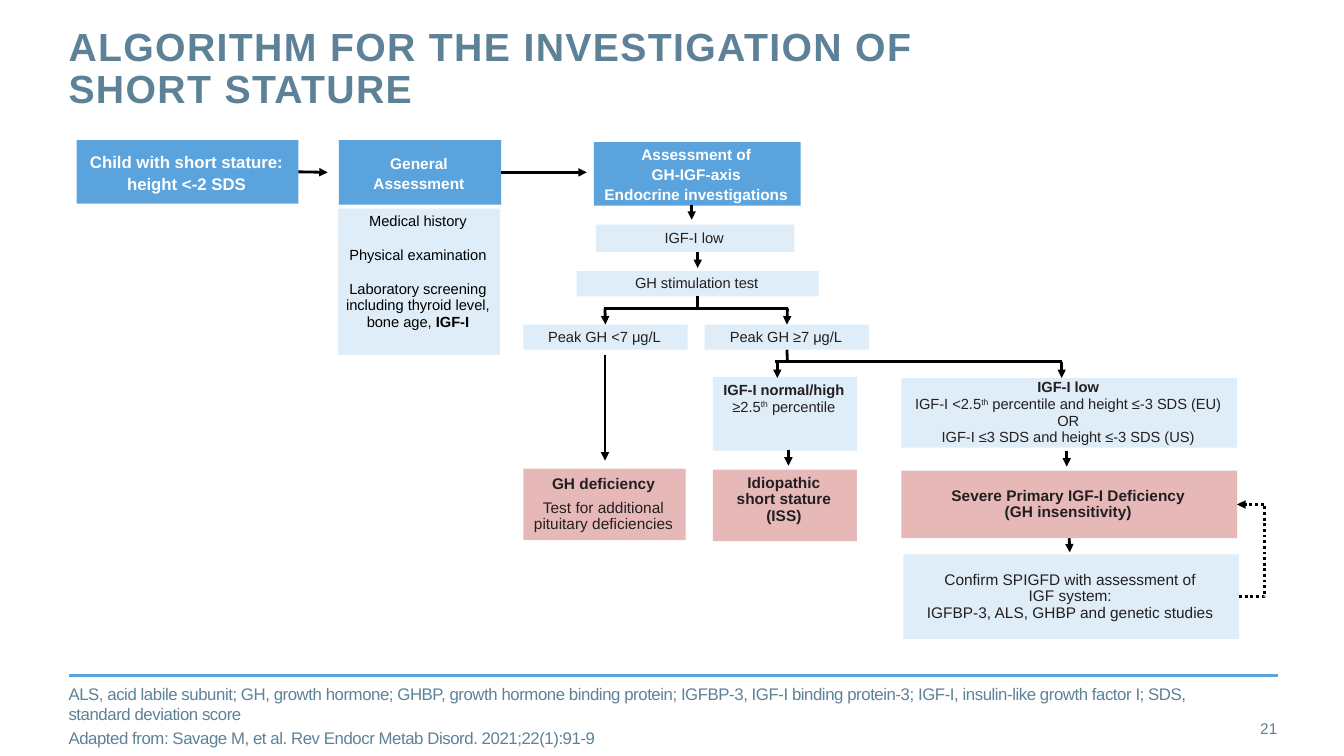
from lxml import etree
from pptx import Presentation
from pptx.dml.color import RGBColor
from pptx.enum.dml import MSO_LINE
from pptx.enum.shapes import MSO_CONNECTOR, MSO_SHAPE
from pptx.enum.text import MSO_ANCHOR, PP_ALIGN
from pptx.oxml.ns import qn
from pptx.util import Inches, Pt

STRAIGHT, ELBOW = MSO_CONNECTOR.STRAIGHT, MSO_CONNECTOR.ELBOW
RECTANGLE = MSO_SHAPE.RECTANGLE
DOTTED = MSO_LINE.ROUND_DOT
TOP, MIDDLE = MSO_ANCHOR.TOP, MSO_ANCHOR.MIDDLE
LEFT, CENTER, RIGHT = PP_ALIGN.LEFT, PP_ALIGN.CENTER, PP_ALIGN.RIGHT
SIDE_TOP, SIDE_BOTTOM, SIDE_RIGHT = 0, 2, 3
FONT = "Arial"
COLOURS = {
    "blue": "5BA3DD", "pale": "DEEDF8", "pink": "E6B9B8", "slate": "5D8298",
    "ink": "231F20", "black": "000000", "white": "FFFFFF",
}

STYLES = {
    "lead": ("blue", "white", 12, 1.07, MIDDLE),
    "stage": ("blue", "white", 11, 1.07, MIDDLE),
    "checks": ("pale", "black", 10.5, 0.95, TOP),
    "finding": ("pale", "ink", 10.5, 0.95, MIDDLE),
    "finding top": ("pale", "ink", 10.5, 0.95, TOP),
    "diagnosis": ("pink", "ink", 11, 0.9, MIDDLE),
    "diagnosis top": ("pink", "ink", 11, 0.9, TOP),
    "follow-up": ("pale", "ink", 11, 0.9, MIDDLE),
}

BOXES = [
    ("child", (0.76, 1.39, 2.2, 0.63), "lead",
     [(0, [("Child with short stature: height <-2 SDS", "bold")])]),
    ("general", (3.36, 1.39, 1.61, 0.64), "stage",
     [(0, [("General Assessment", "bold")])]),
    ("checks", (3.35, 2.07, 1.61, 1.45), "checks",
     [(0, [("Medical history", "")]),
      (12, [("Physical examination", "")]),
      (12, [("Laboratory screening including thyroid level, bone age, ", ""),
            ("IGF-I", "bold")])]),
    ("axis", (5.89, 1.41, 2.05, 0.63), "stage",
     [(0, [("Assessment of", "bold")]),
      (0, [("GH-IGF-axis", "bold")]),
      (0, [("Endocrine investigations", "bold")])]),
    ("low", (5.91, 2.23, 1.97, 0.27), "finding", [(0, [("IGF-I low", "")])]),
    ("stimulation", (5.72, 2.69, 2.4, 0.25), "finding",
     [(0, [("GH stimulation test", "")])]),
    ("peak below", (5.19, 3.22, 1.63, 0.25), "finding",
     [(0, [("Peak GH <7 μg/L", "")])]),
    ("peak above", (6.99, 3.22, 1.63, 0.25), "finding",
     [(0, [("Peak GH ≥7 μg/L", "")])]),
    ("normal", (7.07, 3.74, 1.43, 0.73), "finding top",
     [(0, [("IGF-I normal/high", "bold")]),
      (0, [("≥2.5", ""), ("th", "super"), (" percentile", "")])]),
    ("low percentile", (8.94, 3.75, 3.33, 0.69), "finding",
     [(0, [("IGF-I low", "bold")]),
      (0, [("IGF-I <2.5", ""), ("th", "super"),
           (" percentile and height ≤-3 SDS (EU)", "")]),
      (0, [("OR", "")]),
      (0, [("IGF-I ≤3 SDS and height ≤-3 SDS (US)", "")])]),
    ("deficiency", (5.19, 4.65, 1.61, 0.71), "diagnosis",
     [(0, [("GH deficiency", "bold")]),
      (5.5, [("Test for additional", "")]),
      (0, [("pituitary deficiencies", "")])]),
    ("idiopathic", (7.07, 4.66, 1.43, 0.71), "diagnosis top",
     [(0, [("Idiopathic", "bold")]),
      (0, [("short stature", "bold")]),
      (0, [("(ISS)", "bold")])]),
    ("severe", (8.94, 4.67, 3.33, 0.67), "diagnosis",
     [(0, [("Severe Primary IGF-I Deficiency", "bold")]),
      (0, [("(GH insensitivity)", "bold")])]),
    ("confirm", (8.96, 5.5, 3.33, 0.84), "follow-up",
     [(0, [("Confirm SPIGFD with assessment of", "")]),
      (0, [("IGF system:", "")]),
      (0, [("IGFBP-3, ALS, GHBP and genetic studies", "")])]),
]

ARROWS = [
    (("child", SIDE_RIGHT), (3.25, 1.71)),
    (("general", SIDE_RIGHT), (5.82, 1.71)),
    ((6.86, 2.03), (6.86, 2.18)),
    ((6.92, 2.5), (6.92, 2.66)),
    ((6, 3.06), ("peak below", SIDE_TOP)),
    ((7.81, 3.06), ("peak above", SIDE_TOP)),
    ((6, 3.52), (6, 4.57)),
    ((7.71, 3.59), (7.71, 3.75)),
    ((10.53, 3.59), (10.53, 3.75)),
    ((7.82, 4.46), (7.82, 4.62)),
    ((10.58, 4.47), (10.58, 4.63)),
    (("severe", SIDE_BOTTOM), (10.61, 5.48)),
]
BRANCHES = [
    (("stimulation", SIDE_BOTTOM), (6.92, 3.07)),
    ((7.82, 3.06), (5.99, 3.06)),
    (("peak above", SIDE_BOTTOM), (7.81, 3.59)),
    ((10.53, 3.59), (7.69, 3.59)),
]
FEEDBACK = (("confirm", SIDE_RIGHT), ("severe", SIDE_RIGHT))
FEEDBACK_REACH = 0.25

TITLE = [(0, [("ALGORITHM FOR THE INVESTIGATION OF SHORT STATURE", "bold")])]
FOOTNOTES = [
    (0, [("ALS, acid labile subunit; GH, growth hormone; GHBP, growth hormone binding "
          "protein; IGFBP-3, IGF-I binding protein-3; IGF-I, insulin-like growth factor I; "
          "SDS, standard deviation score", "")]),
    (3, [("Adapted from: Savage M, et al. Rev Endocr Metab Disord. 2021;22(1):91-9", "")]),
]
PAGE_NUMBER = [(0, [("21", "")])]


def colour(name):
    return RGBColor.from_string(COLOURS[name])


def write(shape, paragraphs, ink, size, spacing, anchor, align, margins, tracking=0):
    frame = shape.text_frame
    frame.word_wrap = True
    frame.vertical_anchor = anchor
    (frame.margin_left, frame.margin_top,
     frame.margin_right, frame.margin_bottom) = map(Inches, margins)
    for index, (gap, runs) in enumerate(paragraphs):
        paragraph = frame.add_paragraph() if index else frame.paragraphs[0]
        paragraph.alignment = align
        paragraph.line_spacing = spacing
        if gap:
            paragraph.space_before = Pt(gap)
        for text, emphasis in runs:
            run = paragraph.add_run()
            run.text = text
            run.font.name = FONT
            run.font.size = Pt(size)
            run.font.bold = emphasis == "bold"
            run.font.color.rgb = colour(ink)
            properties = run.font._element
            if emphasis == "super":
                properties.set("baseline", "30000")
            if tracking:
                properties.set("spc", str(int(tracking * 100)))


def add_text(slide, area, paragraphs, size, spacing, anchor, align, tracking=0):
    box = slide.shapes.add_textbox(*map(Inches, area))
    write(box, paragraphs, "slate", size, spacing, anchor, align, (0, 0, 0, 0), tracking)


def add_box(slide, area, style, paragraphs):
    fill, ink, size, spacing, anchor = STYLES[style]
    shape = slide.shapes.add_shape(RECTANGLE, *map(Inches, area))
    shape.shadow.inherit = False
    shape.fill.solid()
    shape.fill.fore_color.rgb = colour(fill)
    shape.line.fill.background()
    write(shape, paragraphs, ink, size, spacing, anchor, CENTER, (0.08, 0.05, 0.1, 0.05))
    return shape


def add_line(slide, boxes, start, end, kind=STRAIGHT, ink="black", arrow=False):
    points = [(0, 0) if end_point[0] in boxes else end_point for end_point in (start, end)]
    line = slide.shapes.add_connector(kind, *map(Inches, points[0] + points[1]))
    if start[0] in boxes:
        line.begin_connect(boxes[start[0]], start[1])
    if end[0] in boxes:
        line.end_connect(boxes[end[0]], end[1])
    line.line.color.rgb = colour(ink)
    line.line.width = Pt(2)
    if arrow:
        etree.SubElement(line.line._get_or_add_ln(), qn("a:tailEnd"), type="triangle")
    etree.SubElement(line._element.spPr, qn("a:effectLst"))
    return line


def main():
    presentation = Presentation()
    presentation.slide_width, presentation.slide_height = Inches(13.33), Inches(7.5)
    slide = presentation.slides.add_slide(presentation.slide_layouts[6])

    add_line(slide, {}, (0.68, 6.7), (12.68, 6.7), ink="blue")
    add_text(slide, (0.68, 0.27, 9.56, 0.88), TITLE, 28, Pt(30), TOP, LEFT, 1)
    add_text(slide, (11.81, 7.03, 0.86, 0.4), PAGE_NUMBER, 11, 1.0, MIDDLE, RIGHT)
    add_text(slide, (0.68, 6.9, 11.13, 0.4), FOOTNOTES, 12, 1.0, MIDDLE, LEFT, -0.3)

    boxes = {name: add_box(slide, *details) for name, *details in BOXES}
    for start, end in BRANCHES:
        add_line(slide, boxes, start, end)
    for start, end in ARROWS:
        add_line(slide, boxes, start, end, arrow=True)

    feedback = add_line(slide, boxes, *FEEDBACK, kind=ELBOW, arrow=True)
    feedback.line.dash_style = DOTTED
    bend = -round(Inches(FEEDBACK_REACH) / feedback.width * 100000)
    adjustments = feedback._element.spPr.find(qn("a:prstGeom")).get_or_add_avLst()
    etree.SubElement(adjustments, qn("a:gd"), name="adj1", fmla=f"val {bend}")

    presentation.save("out.pptx")


if __name__ == "__main__":
    main()
